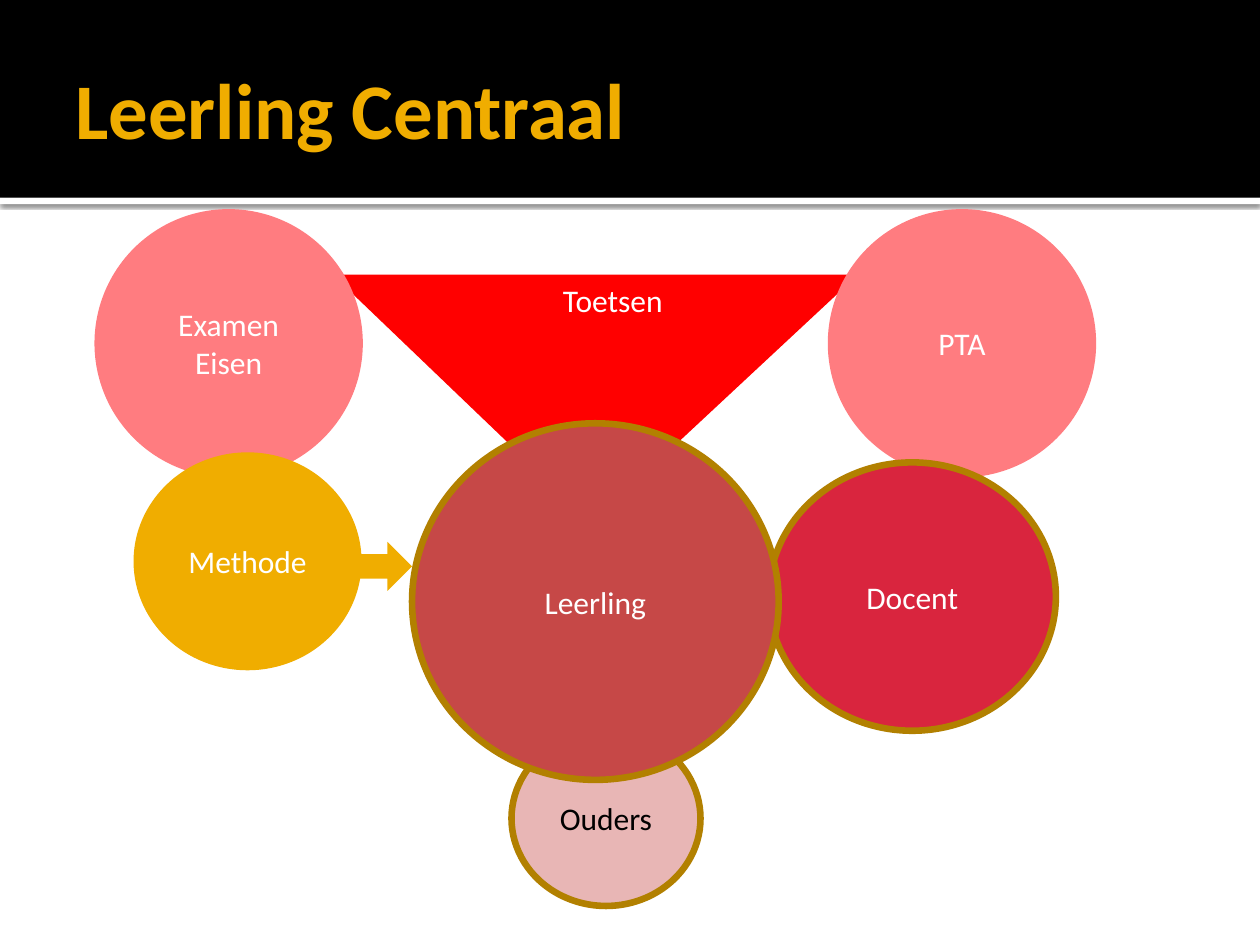
import pptx
import pptx.dml.color
import pptx.enum.shapes
import pptx.enum.text
import pptx.oxml
import pptx.oxml.ns
import pptx.util

RGBColor = pptx.dml.color.RGBColor
MSO_SHAPE = pptx.enum.shapes.MSO_SHAPE
PP_ALIGN = pptx.enum.text.PP_ALIGN
MSO_ANCHOR = pptx.enum.text.MSO_ANCHOR

BLACK = RGBColor(0x00, 0x00, 0x00)
WHITE = RGBColor(0xFF, 0xFF, 0xFF)
GOLD = RGBColor(0xF0, 0xAD, 0x00)
DARK_GOLD = RGBColor(0xB2, 0x80, 0x00)
RED = RGBColor(0xFF, 0x00, 0x00)
SALMON = RGBColor(0xFF, 0x7C, 0x80)
CRIMSON = RGBColor(0xD9, 0x25, 0x3E)
PINK = RGBColor(0xE8, 0xB6, 0xB5)
BRICK = RGBColor(0xC6, 0x48, 0x47)

FONT = "Calibri"
SLIDE_WIDTH = pptx.util.Inches(10)
SLIDE_HEIGHT = pptx.util.Inches(7.5)
COLUMN = SLIDE_WIDTH / 100
ROW = SLIDE_HEIGHT / 75


def place(left, top, width, height):
    return (round(left * COLUMN), round(top * ROW),
            round(width * COLUMN), round(height * ROW))


def write_text(shape, text, size, color, align, bold=False):
    shape.text_frame.word_wrap = True
    paragraph = shape.text_frame.paragraphs[0]
    paragraph.alignment = align
    run = paragraph.add_run()
    run.text = text
    run.font.name = FONT
    run.font.size = pptx.util.Pt(size)
    run.font.bold = bold
    run.font.color.rgb = color


def add_filled_shape(shapes, kind, box, fill, outline=None):
    shape = shapes.add_shape(kind, *place(*box))
    shape.shadow.inherit = False
    shape.fill.solid()
    shape.fill.fore_color.rgb = fill
    if outline is None:
        shape.line.fill.background()
    else:
        shape.line.color.rgb = outline
        shape.line.width = pptx.util.Pt(3.78)
    return shape


def add_circle(shapes, text, box, fill, outline=None, color=WHITE):
    circle = add_filled_shape(shapes, MSO_SHAPE.OVAL, box, fill, outline)
    circle.text_frame.vertical_anchor = MSO_ANCHOR.MIDDLE
    write_text(circle, text, 18, color, PP_ALIGN.CENTER)


def add_text(shapes, text, box, size, color, bold=False):
    text_box = shapes.add_textbox(*place(*box))
    write_text(text_box, text, size, color, PP_ALIGN.LEFT, bold)
    return text_box


def add_drop_shadow(shape):
    effects = shape._element.spPr.find(pptx.oxml.ns.qn("a:effectLst"))
    effects.append(pptx.oxml.parse_xml(
        f'<a:outerShdw {pptx.oxml.ns.nsdecls("a")} blurRad="{pptx.util.Pt(2.5)}" '
        f'dist="{pptx.util.Pt(0.8)}" dir="5400000" algn="t" rotWithShape="0">'
        f'<a:srgbClr val="{BLACK}"><a:alpha val="60000"/></a:srgbClr></a:outerShdw>'))


def add_header(shapes):
    stripe = add_filled_shape(shapes, MSO_SHAPE.RECTANGLE, (0, 15.7, 100, 0.5), WHITE)
    add_drop_shadow(stripe)
    add_filled_shape(shapes, MSO_SHAPE.RECTANGLE, (0, 0, 100, 15.7), BLACK)


def add_title(shapes):
    title = add_text(shapes, "Leerling Centraal", (5, 1.7, 90, 13.7), 45, GOLD, True)
    title.text_frame.vertical_anchor = MSO_ANCHOR.MIDDLE
    title.text_frame.margin_right = pptx.util.Inches(0.05)


def add_test_group(shapes):
    group = shapes.add_group_shape()
    triangle = add_filled_shape(group.shapes, MSO_SHAPE.ISOSCELES_TRIANGLE,
                                (26.4, 21.8, 41.7, 19.7), RED)
    triangle.adjustments[0] = 0.507
    triangle.rotation = 180
    for text, left in (("Examen Eisen", 7.5), ("PTA", 65.7)):
        add_circle(group.shapes, text, (left, 16.6, 21.3, 21.3), SALMON)


def main():
    presentation = pptx.Presentation()
    presentation.slide_width = SLIDE_WIDTH
    presentation.slide_height = SLIDE_HEIGHT
    slide = presentation.slides.add_slide(presentation.slide_layouts[6])
    shapes = slide.shapes

    add_header(shapes)
    add_test_group(shapes)
    add_title(shapes)
    add_circle(shapes, "Methode", (10.6, 35.9, 18.1, 17.3), GOLD)
    add_circle(shapes, "Docent", (61, 36.7, 22.8, 21.3), CRIMSON, DARK_GOLD)
    add_circle(shapes, "Ouders", (40.6, 58, 15, 13.9), PINK, DARK_GOLD, BLACK)
    label = add_text(shapes, "Toetsen", (43.7, 21.8, 13.4, 4), 18, WHITE)
    label.text_frame.auto_size = pptx.enum.text.MSO_AUTO_SIZE.SHAPE_TO_FIT_TEXT
    add_filled_shape(shapes, MSO_SHAPE.RIGHT_ARROW, (25.6, 43, 7.1, 3.9), GOLD)
    add_circle(shapes, "Leerling", (32.7, 33.6, 29.1, 28.3), BRICK, DARK_GOLD)

    presentation.save("out.pptx")


if __name__ == "__main__":
    main()
